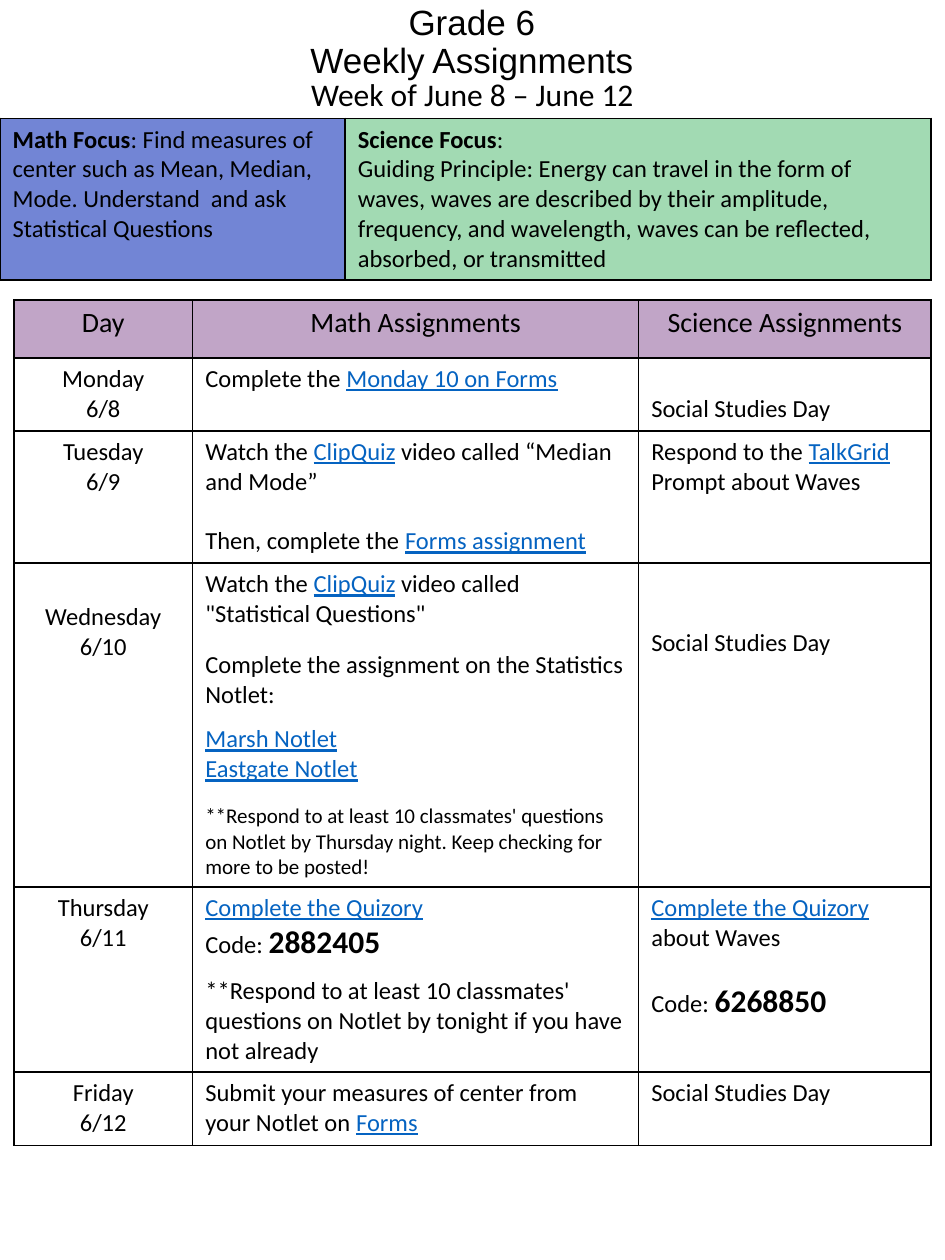
"""Builds a one-page weekly assignment sheet for Grade 6."""
from lxml import etree
from pptx import Presentation
from pptx import util as u
from pptx.dml.color import RGBColor
from pptx.enum import text
from pptx.oxml.ns import qn

BLACK = RGBColor(0x00, 0x00, 0x00)
LINK = RGBColor(0x05, 0x63, 0xC1)
BLUE = RGBColor(0x72, 0x85, 0xD5)
GREEN = RGBColor(0xA2, 0xDA, 0xB3)
PURPLE = RGBColor(0xC1, 0xA5, 0xC7)
CENTER = text.PP_ALIGN.CENTER
LEFT = text.PP_ALIGN.LEFT
MARGIN = 0.05


def link(words):
    return words, "link"


def bold(words, size=14):
    return words, "bold", size


def para(*runs, gap=0, size=14):
    return runs, gap, size


class Sheet:
    def __init__(self, s):
        self.s = s
        self.font = "Calibri"

    def heading(self, sp, words, box, size, font, anchor):
        sp.left, sp.top, sp.width, sp.height = (u.Inches(v) for v in box)
        tf = sp.text_frame
        tf.text = words
        tf.auto_size = text.MSO_AUTO_SIZE.NONE
        tf.vertical_anchor = anchor
        for p in tf.paragraphs:
            p.alignment = CENTER
            p.line_spacing = 0.9
            p.space_before = u.Pt(0)
            p.font.name, p.font.size = font, u.Pt(size)
            p.font.color.rgb = BLACK

    def table(self, left, top, cols, rows):
        shape = self.s.shapes.add_table(
            len(rows), len(cols), u.Inches(left), u.Inches(top),
            u.Inches(sum(cols)), u.Inches(sum(rows)))
        table = shape.table
        table.first_row = table.horz_banding = False
        for col, width in zip(table.columns, cols):
            col.width = u.Inches(width)
        for row, height in zip(table.rows, rows):
            row.height = u.Inches(height)
        return table

    def cell(self, cell, paras, fill=None, align=LEFT, drop=0):
        cell.margin_top = u.Inches(MARGIN + drop)
        tf = cell.text_frame
        for i, (runs, gap, size) in enumerate(paras):
            p = tf.add_paragraph() if i else tf.paragraphs[0]
            p.alignment = align
            p.space_before = u.Pt(gap)
            p.font.name, p.font.size = self.font, u.Pt(size)
            p.font.color.rgb = BLACK
            for run in runs:
                self.run(p, run)
        self.borders(cell)
        if fill is None:
            cell.fill.background()
        else:
            cell.fill.solid()
            cell.fill.fore_color.rgb = fill

    def run(self, p, run):
        words, kind, *size = (run, "plain") if isinstance(run, str) else run
        r = p.add_run()
        r.text = words
        if kind == "link":
            r.font.underline = True
            r.font.color.rgb = LINK
        elif kind == "bold":
            r.font.bold = True
            r.font.size = u.Pt(size[0])

    def borders(self, cell):
        props = cell._tc.get_or_add_tcPr()
        for side in ("a:lnL", "a:lnR", "a:lnT", "a:lnB"):
            ln = etree.SubElement(props, qn(side), w=str(u.Pt(0.96)))
            fill = etree.SubElement(ln, qn("a:solidFill"))
            etree.SubElement(fill, qn("a:srgbClr"), val=str(BLACK))


HEADERS = ["Day", "Math Assignments", "Science Assignments"]
SOCIAL = [para("Social Studies Day")]

# Each entry: day, date, math, science, row height, day drop, science drop
WEEK = [
    ("Monday", "6/8",
     [para("Complete the ", link("Monday 10 on Forms"))],
     SOCIAL, 0.58, 0, 0.24),
    ("Tuesday", "6/9",
     [para("Watch the ", link("ClipQuiz"), " video called “Median and Mode”"),
      para("Then, complete the ", link("Forms assignment"), gap=17)],
     [para("Respond to the ", link("TalkGrid"), " Prompt about Waves")],
     1.05, 0, 0),
    ("Wednesday", "6/10",
     [para("Watch the ", link("ClipQuiz"),
           " video called \"Statistical Questions\""),
      para("Complete the assignment on the Statistics Notlet:", gap=12),
      para(link("Marsh Notlet"), gap=8.5),
      para(link("Eastgate Notlet")),
      para("**Respond to at least 10 classmates' questions on Notlet by "
           "Thursday night. Keep checking for more to be posted!",
           gap=11, size=12)],
     SOCIAL, 2.57, 0.26, 0.47),
    ("Thursday", "6/11",
     [para(link("Complete the Quizory")),
      para("Code: ", bold("2882405", 18)),
      para("**Respond to at least 10 classmates' questions on Notlet by "
           "tonight if you have not already", gap=8.5)],
     [para(link("Complete the Quizory"), " about Waves"),
      para("Code: ", bold("6268850", 18), gap=17)],
     1.47, 0, 0),
    ("Friday", "6/12",
     [para("Submit your measures of center from your Notlet on ",
           link("Forms"))],
     SOCIAL, 0.58, 0, 0),
]

MATH_FOCUS = [
    para(bold("Math Focus"), ": Find measures of center such as Mean, Median, "
         "Mode. Understand  and ask Statistical Questions")]
SCIENCE_FOCUS = [
    para(bold("Science Focus"), ":"),
    para("Guiding Principle: Energy can travel in the form of waves, waves "
         "are described by their amplitude, frequency, and wavelength, waves "
         "can be reflected, absorbed, or transmitted")]


def main():
    prs = Presentation()
    prs.slide_width, prs.slide_height = u.Inches(7.5), u.Inches(10)
    s = prs.slides.add_slide(prs.slide_layouts[0])
    sheet = Sheet(s)

    sheet.heading(s.shapes.title, "Grade 6\vWeekly Assignments",
                  (0.56, -0.21, 6.37, 0.9), 20, "Arial",
                  text.MSO_ANCHOR.BOTTOM)
    sheet.heading(s.placeholders[1], "Week of June 8 – June 12",
                  (0.94, 0.58, 5.62, 1.11), 18, "Calibri",
                  text.MSO_ANCHOR.TOP)

    plan = sheet.table(0.11, 2.38, [1.42, 3.54, 2.32],
                       [0.46] + [day[4] for day in WEEK])
    for col, words in enumerate(HEADERS):
        sheet.cell(plan.cell(0, col), [para(words, size=16)], PURPLE, CENTER)
    for row, (day, date, math, science, _, day_drop, science_drop) in enumerate(WEEK, 1):
        sheet.cell(plan.cell(row, 0), [para(day), para(date)],
                   align=CENTER, drop=day_drop)
        sheet.cell(plan.cell(row, 1), math)
        sheet.cell(plan.cell(row, 2), science, drop=science_drop)

    focus = sheet.table(0, 0.94, [2.74, 4.65], [1.27])
    sheet.cell(focus.cell(0, 0), MATH_FOCUS, BLUE)
    sheet.cell(focus.cell(0, 1), SCIENCE_FOCUS, GREEN)

    prs.save("out.pptx")


if __name__ == "__main__":
    main()
